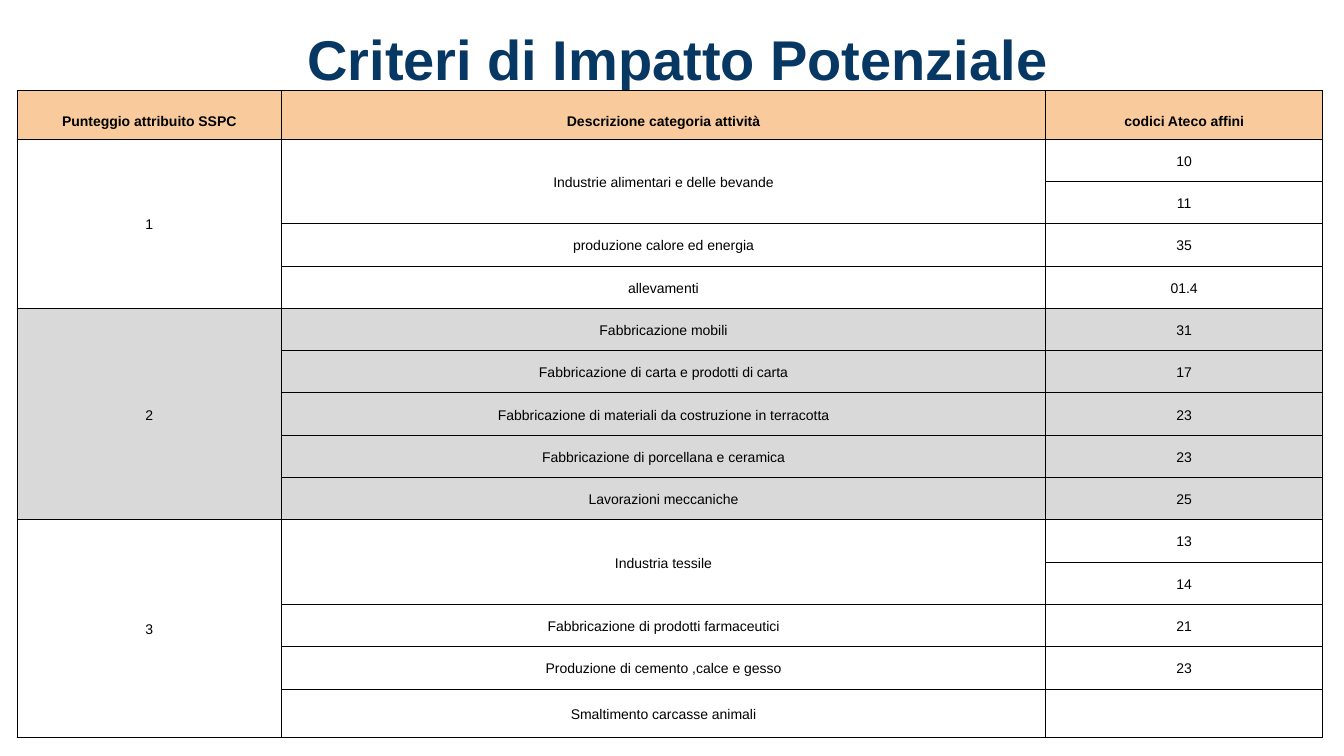
from dataclasses import dataclass

from lxml import etree
from pptx import Presentation
from pptx.dml.color import RGBColor
from pptx.enum import text
from pptx.oxml import ns
from pptx.util import Inches, Pt


@dataclass(frozen=True)
class Theme:
    font: str = "Arial"
    title: str = "073763"
    ink: str = "000000"
    header_fill: str = "F9CB9C"
    band_fill: str = "D9D9D9"
    title_size: int = 40
    table_size: int = 10
    border_width: float = 0.75


THEME = Theme()
TITLE = "Criteri di Impatto Potenziale"
HEADERS = ["Punteggio attribuito SSPC", "Descrizione categoria attività", "codici Ateco affini"]
COLUMN_WIDTHS = [2.62, 7.58, 2.75]
HEADER_HEIGHT, ROW_HEIGHT = 0.48, 0.42

# (score, fill, [(activity, Ateco codes)])
SCORES = [
    ("1", None, [
        ("Industrie alimentari e delle bevande", ["10", "11"]),
        ("produzione calore ed energia", ["35"]),
        ("allevamenti", ["01.4"]),
    ]),
    ("2", THEME.band_fill, [
        ("Fabbricazione mobili", ["31"]),
        ("Fabbricazione di carta e prodotti di carta", ["17"]),
        ("Fabbricazione di materiali da costruzione in terracotta", ["23"]),
        ("Fabbricazione di porcellana e ceramica", ["23"]),
        ("Lavorazioni meccaniche", ["25"]),
    ]),
    ("3", None, [
        ("Industria tessile", ["13", "14"]),
        ("Fabbricazione di prodotti farmaceutici", ["21"]),
        ("Produzione di cemento ,calce e gesso", ["23"]),
        ("Smaltimento carcasse animali", [""]),
    ]),
]


def write(tf, content, size, color=THEME.ink, bold=False, spacing=1.0):
    p = tf.paragraphs[0]
    p.alignment = text.PP_ALIGN.CENTER
    p.line_spacing = spacing
    r = p.add_run()
    r.text = content
    r.font.name = THEME.font
    r.font.size = Pt(size)
    r.font.bold = bold
    r.font.color.rgb = RGBColor.from_string(color)


def add_title(slide):
    title = slide.shapes.title
    title.left, title.top = Inches(0.42), Inches(0.05)
    title.width, title.height = Inches(12.6), Inches(1.05)
    tf = title.text_frame
    tf.word_wrap = True
    tf.auto_size = text.MSO_AUTO_SIZE.NONE
    tf.vertical_anchor = text.MSO_ANCHOR.MIDDLE
    tf.margin_left = tf.margin_right = tf.margin_top = tf.margin_bottom = Inches(0.13)
    write(tf, TITLE, THEME.title_size, color=THEME.title, bold=True)


def set_borders(cell):
    tc_pr = cell._tc.get_or_add_tcPr()
    for side in ("a:lnL", "a:lnR", "a:lnT", "a:lnB"):
        line = etree.SubElement(tc_pr, ns.qn(side), w=str(Pt(THEME.border_width)))
        fill = etree.SubElement(line, ns.qn("a:solidFill"))
        etree.SubElement(fill, ns.qn("a:srgbClr"), val=THEME.ink)


def format_cell(cell, fill=None, anchor=text.MSO_ANCHOR.MIDDLE):
    cell.margin_left = cell.margin_right = Inches(0.03)
    cell.margin_top = cell.margin_bottom = Inches(0.1)
    cell.vertical_anchor = anchor
    set_borders(cell)
    if fill:
        cell.fill.solid()
        cell.fill.fore_color.rgb = RGBColor.from_string(fill)
    else:
        cell.fill.background()


def write_cell(table, row, col, content, span=1, bold=False):
    """Write a cell that covers span rows."""
    cell = table.cell(row, col)
    if span > 1:
        cell.merge(table.cell(row + span - 1, col))
    write(cell.text_frame, content, THEME.table_size, bold=bold, spacing=1.15)


def add_criteria_table(slide):
    row_count = 1 + sum(len(codes) for _, _, group in SCORES for _, codes in group)
    height = HEADER_HEIGHT + ROW_HEIGHT * (row_count - 1)
    table = slide.shapes.add_table(
        row_count, len(HEADERS), Inches(0.17), Inches(0.9),
        Inches(sum(COLUMN_WIDTHS)), Inches(height)).table
    table.first_row = table.horz_banding = False
    for column, width in zip(table.columns, COLUMN_WIDTHS):
        column.width = Inches(width)
    for i, row in enumerate(table.rows):
        row.height = Inches(ROW_HEIGHT if i else HEADER_HEIGHT)

    for col, header in enumerate(HEADERS):
        format_cell(table.cell(0, col), THEME.header_fill, text.MSO_ANCHOR.BOTTOM)
        write_cell(table, 0, col, header, bold=True)

    row = 1
    for score, fill, activities in SCORES:
        score_span = sum(len(codes) for _, codes in activities)
        for r in range(row, row + score_span):
            for col in range(len(HEADERS)):
                format_cell(table.cell(r, col), fill)
        write_cell(table, row, 0, score, span=score_span)
        for activity, codes in activities:
            write_cell(table, row, 1, activity, span=len(codes))
            for code in codes:
                write_cell(table, row, 2, code)
                row += 1


def main():
    prs = Presentation()
    prs.slide_width, prs.slide_height = Inches(13.33), Inches(7.5)
    slide = prs.slides.add_slide(prs.slide_layouts[5])
    add_title(slide)
    add_criteria_table(slide)
    prs.save("out.pptx")


if __name__ == "__main__":
    main()
